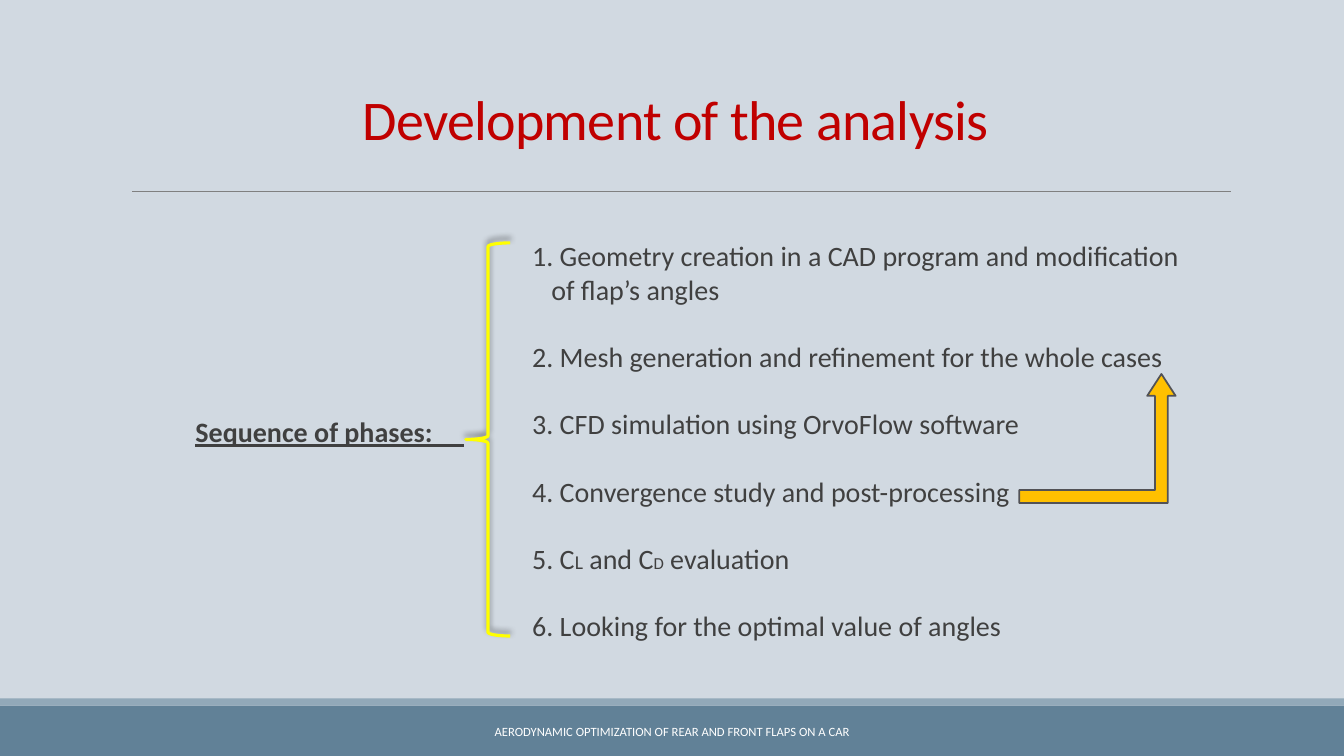
import dataclasses

import pptx
import pptx.dml.color
import pptx.enum.shapes
import pptx.enum.text
import pptx.oxml
import pptx.oxml.ns
import pptx.util

Inches = pptx.util.Inches
Pt = pptx.util.Pt
SHAPE = pptx.enum.shapes.MSO_SHAPE
ALIGN = pptx.enum.text.PP_ALIGN
ANCHOR = pptx.enum.text.MSO_ANCHOR


@dataclasses.dataclass(frozen=True)
class Theme:
    font: str = "Calibri"
    background: str = "D1D9E1"
    footer_band: str = "618197"
    footer_edge: str = "92A9B9"
    rule: str = "808080"
    title: str = "C00000"
    body: str = "404040"
    footer_text: str = "FFFFFF"
    brace: str = "FFFF00"
    arrow: str = "FFC000"
    arrow_outline: str = "525256"
    title_size: float = 40
    body_size: float = 20
    lift_size: float = 14
    drag_size: float = 12
    footer_size: float = 9
    phase_gap: float = 24


def color(value):
    return pptx.dml.color.RGBColor.from_string(value)


def add_text(paragraph, text, *, font, size, fill, bold=False, underline=False, tracking=None):
    run = paragraph.add_run()
    run.text = text
    run.font.name = font
    run.font.size = Pt(size)
    run.font.color.rgb = color(fill)
    run.font.bold = bold
    run.font.underline = underline
    if tracking is not None:
        run.font._element.set("spc", str(round(tracking * 100)))


def set_hanging_indent(paragraph, indent):
    properties = paragraph._p.get_or_add_pPr()
    properties.set("marL", str(Inches(indent)))
    properties.set("indent", str(-Inches(indent)))


class SlideBuilder:
    def __init__(self, presentation, theme):
        self.theme = theme
        self.slide = presentation.slides.add_slide(presentation.slide_layouts[5])
        self.slide.background.fill.solid()
        self.slide.background.fill.fore_color.rgb = color(theme.background)

    def title(self, text, left, top, width, height):
        title = self.slide.shapes.title
        title.left, title.top = Inches(left), Inches(top)
        title.width, title.height = Inches(width), Inches(height)
        frame = title.text_frame
        frame.auto_size = pptx.enum.text.MSO_AUTO_SIZE.NONE
        frame.vertical_anchor = ANCHOR.BOTTOM
        paragraph = frame.paragraphs[0]
        paragraph.alignment = ALIGN.CENTER
        paragraph.line_spacing = 0.85
        add_text(paragraph, text, font=self.theme.font, size=self.theme.title_size,
                 fill=self.theme.title, tracking=-0.5)

    def text_frame(self, left, top, width, height, anchor=ANCHOR.TOP):
        box = self.slide.shapes.add_textbox(
            Inches(left), Inches(top), Inches(width), Inches(height))
        box.text_frame.word_wrap = True
        box.text_frame.vertical_anchor = anchor
        return box.text_frame

    def shape(self, kind, left, top, width, height, fill=None, line=None, line_width=1,
              adjustments=()):
        shape = self.slide.shapes.add_shape(
            kind, Inches(left), Inches(top), Inches(width), Inches(height))
        shape.shadow.inherit = False
        for index, value in enumerate(adjustments):
            shape.adjustments[index] = value
        if fill:
            shape.fill.solid()
            shape.fill.fore_color.rgb = color(fill)
        else:
            shape.fill.background()
        if line:
            shape.line.color.rgb = color(line)
            shape.line.width = Pt(line_width)
        else:
            shape.line.fill.background()
        return shape

    def rule(self, left, right, top, line, line_width):
        rule = self.slide.shapes.add_connector(
            pptx.enum.shapes.MSO_CONNECTOR.STRAIGHT,
            Inches(left), Inches(top), Inches(right), Inches(top))
        rule.line.color.rgb = color(line)
        rule.line.width = Pt(line_width)
        rule._element.spPr.append(
            pptx.oxml.parse_xml(f'<a:effectLst {pptx.oxml.ns.nsdecls("a")}/>'))

    def brace(self, left, top, width, height):
        """Add a left brace with a soft shadow cast upwards."""
        brace = self.shape(SHAPE.LEFT_BRACE, left, top, width, height,
                           line=self.theme.brace, line_width=2.25)
        effects = brace._element.spPr.find(pptx.oxml.ns.qn("a:effectLst"))
        effects.append(pptx.oxml.parse_xml(
            f'<a:outerShdw {pptx.oxml.ns.nsdecls("a")} blurRad="{Pt(4)}" dist="{Pt(3)}" '
            'dir="16200000" algn="b" rotWithShape="0"><a:srgbClr val="000000">'
            '<a:alpha val="40000"/></a:srgbClr></a:outerShdw>'))

    def heading(self, text, left, top, width, height):
        frame = self.text_frame(left, top, width, height)
        frame.margin_left = Inches(0.1)
        frame.margin_right = 0
        paragraph = frame.paragraphs[0]
        paragraph.line_spacing = 0.9
        add_text(paragraph, text, font=self.theme.font, size=self.theme.body_size,
                 fill=self.theme.body, bold=True, underline=True)

    def phases(self, phases, left, top, width, height):
        """Add one paragraph per phase, each a list of (text, size) pieces."""
        frame = self.text_frame(left, top, width, height)
        for index, pieces in enumerate(phases):
            paragraph = frame.add_paragraph() if index else frame.paragraphs[0]
            paragraph.space_before = Pt(self.theme.phase_gap if index else 0)
            set_hanging_indent(paragraph, 0.19)
            for text, size in pieces:
                add_text(paragraph, text, font=self.theme.font, size=size, fill=self.theme.body)

    def footer(self, text, left, top, width, height):
        paragraph = self.text_frame(left, top, width, height, ANCHOR.MIDDLE).paragraphs[0]
        paragraph.alignment = ALIGN.CENTER
        add_text(paragraph, text, font=self.theme.font, size=self.theme.footer_size,
                 fill=self.theme.footer_text)


def main():
    presentation = pptx.Presentation()
    presentation.slide_width = Inches(13.33)
    presentation.slide_height = Inches(7.5)
    theme = Theme()
    builder = SlideBuilder(presentation, theme)

    builder.shape(SHAPE.RECTANGLE, 0, 7, 13.33, 0.5, fill=theme.footer_band)
    builder.shape(SHAPE.RECTANGLE, 0, 6.93, 13.33, 0.07, fill=theme.footer_edge)
    builder.rule(1.31, 12.21, 1.9, theme.rule, 0.5)
    builder.title("Development of the analysis", 1.2, 0.31, 11, 1.25)
    builder.heading("Sequence of phases:", 1.84, 4.1, 3.34, 0.5)
    builder.rule(4.28, 4.6, 4.42, theme.body, 2)
    builder.footer("AERODYNAMIC OPTIMIZATION OF REAR AND FRONT FLAPS ON A CAR",
                   4.03, 7.06, 5.27, 0.4)

    size = theme.body_size
    builder.phases([
        [("1. Geometry creation in a CAD program and modification of flap’s angles", size)],
        [("2. Mesh generation and refinement for the whole cases", size)],
        [("3. CFD simulation using OrvoFlow software", size)],
        [("4. Convergence study and post-processing", size)],
        [("5. C", size), ("L", theme.lift_size), (" and C", size), ("D", theme.drag_size),
         (" evaluation", size)],
        [("6. Looking for the optimal value of angles", size)],
    ], 5.18, 2.32, 6.7, 5.05)

    builder.brace(4.62, 2.41, 0.44, 3.9)
    builder.shape(SHAPE.BENT_UP_ARROW, 10.11, 3.71, 1.55, 1.28, fill=theme.arrow,
                  line=theme.arrow_outline, line_width=1.25,
                  adjustments=(0.1, 0.11, 0.17))
    presentation.save("out.pptx")


if __name__ == "__main__":
    main()
